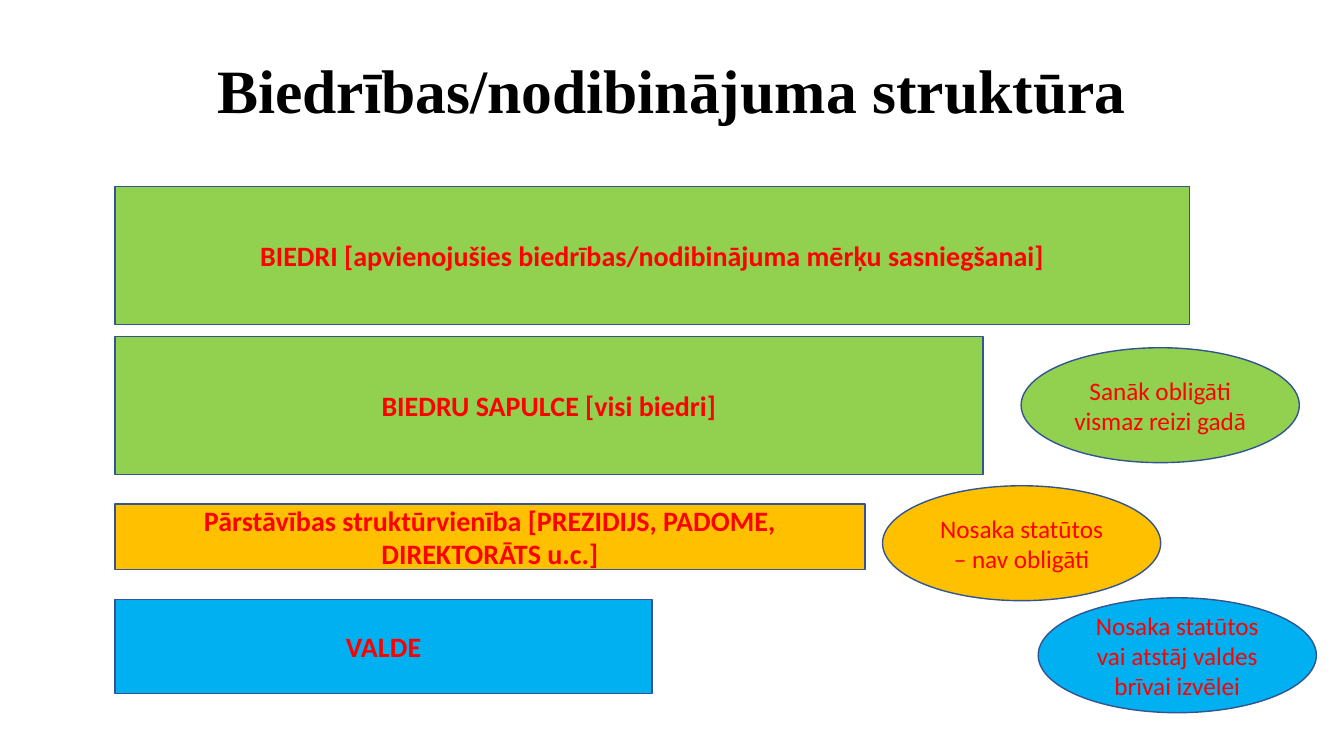
from pptx import Presentation
from pptx.dml.color import RGBColor
from pptx.enum.shapes import MSO_SHAPE
from pptx.enum.text import MSO_ANCHOR, PP_ALIGN
from pptx.util import Pt

BLACK = RGBColor(0x00, 0x00, 0x00)
RED = RGBColor(0xFF, 0x00, 0x00)
GREEN = RGBColor(0x92, 0xD0, 0x50)
AMBER = RGBColor(0xFF, 0xC0, 0x00)
BLUE = RGBColor(0x00, 0xB0, 0xF0)
OUTLINE = RGBColor(0x32, 0x54, 0x91)

TITLE = "Biedrības/nodibinājuma struktūra"
# text, fill, top, width, height
LEVELS = [
    ("BIEDRI [apvienojušies biedrības/nodibinājuma mērķu sasniegšanai]", GREEN, 133.2, 767.5, 98.6),
    ("BIEDRU SAPULCE [visi biedri]", GREEN, 240.5, 620, 98.6),
    ("Pārstāvības struktūrvienība [PREZIDIJS, PADOME, DIREKTORĀTS u.c.]", AMBER, 360, 535.7, 46.8),
    ("VALDE", BLUE, 428.4, 383.8, 67),
]
# text, fill, left, top
REMARKS = [
    ("Sanāk obligāti vismaz reizi gadā", GREEN, 729.4, 248.4),
    ("Nosaka statūtos – nav obligāti", AMBER, 630.4, 347),
    ("Nosaka statūtos vai atstāj valdes brīvai izvēlei", BLUE, 741.6, 427),
]
LEVEL_LEFT = 82.1
REMARK_SIZE = (198.7, 82.1)

TITLE_FONT = {"name": "Times New Roman", "size": Pt(44), "bold": True}
LEVEL_FONT = {"name": "Calibri", "size": Pt(20), "bold": True}
REMARK_FONT = {"name": "Calibri", "size": Pt(18), "bold": False}


def write_centred(shape, text, font_format, color):
    frame = shape.text_frame
    frame.word_wrap = True
    frame.vertical_anchor = MSO_ANCHOR.MIDDLE
    para = frame.paragraphs[0]
    para.alignment = PP_ALIGN.CENTER
    span = para.add_run()
    span.text = text
    for name, value in font_format.items():
        setattr(span.font, name, value)
    span.font.color.rgb = color
    return para


def add_block(page, kind, bounds, fill, text, font_format):
    block = page.shapes.add_shape(kind, *map(Pt, bounds))
    block.shadow.inherit = False
    block.fill.solid()
    block.fill.fore_color.rgb = fill
    block.line.color.rgb = OUTLINE
    block.line.width = Pt(1)
    write_centred(block, text, font_format, RED)


def main():
    deck = Presentation()
    deck.slide_width, deck.slide_height = Pt(960), Pt(540)
    page = deck.slides.add_slide(deck.slide_layouts[6])

    title_box = page.shapes.add_textbox(Pt(66), Pt(28.8), Pt(828), Pt(75.6))
    write_centred(title_box, TITLE, TITLE_FONT, BLACK).line_spacing = 0.9

    for text, fill, top, width, height in LEVELS:
        bounds = (LEVEL_LEFT, top, width, height)
        add_block(page, MSO_SHAPE.RECTANGLE, bounds, fill, text, LEVEL_FONT)

    for text, fill, left, top in REMARKS:
        bounds = (left, top, *REMARK_SIZE)
        add_block(page, MSO_SHAPE.OVAL, bounds, fill, text, REMARK_FONT)

    deck.save("out.pptx")


if __name__ == "__main__":
    main()
